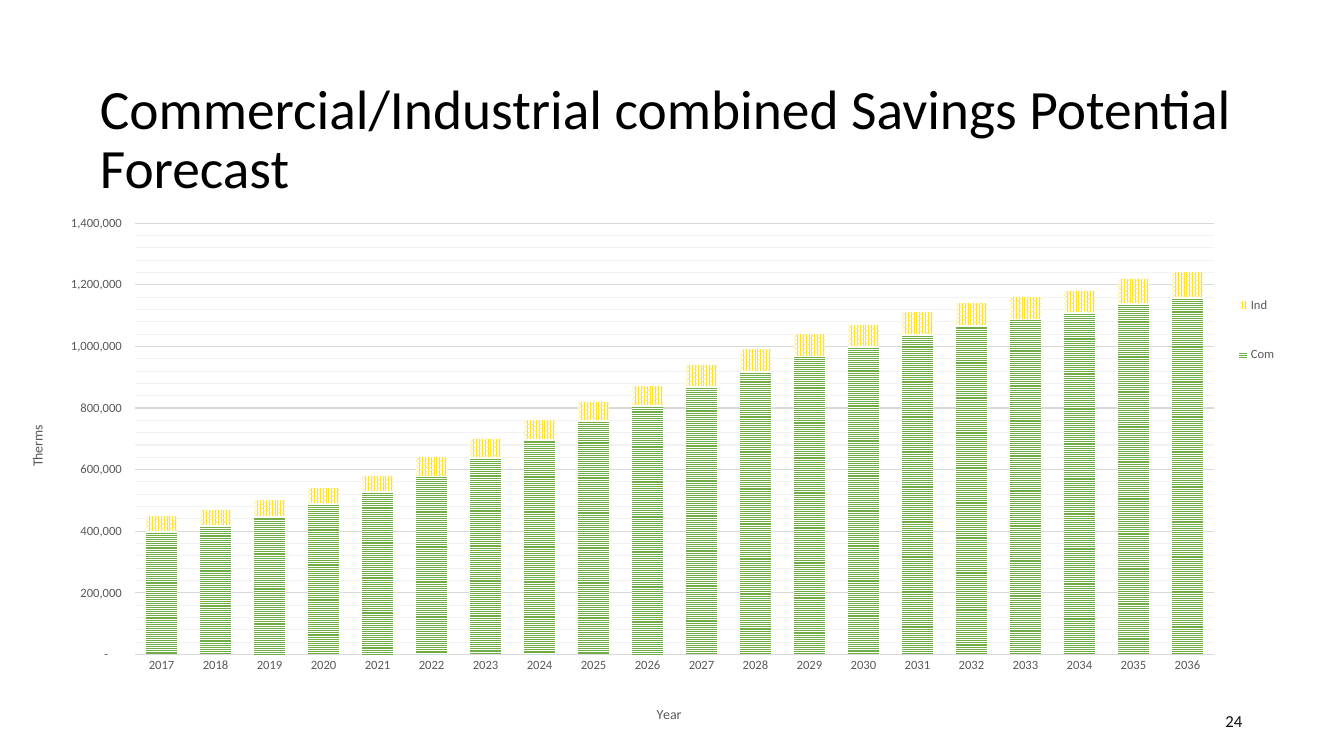
from pptx import Presentation
from pptx.chart.data import CategoryChartData
from pptx.dml.color import RGBColor
from pptx.enum.chart import XL_CHART_TYPE as ChartType, XL_LEGEND_POSITION as LegendPosition
from pptx.enum.chart import XL_TICK_MARK as TickMark
from pptx.enum.dml import MSO_PATTERN as Pattern
from pptx.enum.text import MSO_ANCHOR as Anchor, MSO_AUTO_SIZE as AutoSize, PP_ALIGN as Align
from pptx.oxml import parse_xml
from pptx.oxml.ns import nsdecls, qn
from pptx.util import Inches, Pt

FONT = "Calibri"
COLORS = {
    "title": "000000",
    "page": "0D0D0D",
    "label": "595959",
    "grid": "D9D9D9",
    "minor_grid": "F2F2F2",
    "commercial": "70AD47",
    "industrial": "FFE12F",
    "white": "FFFFFF",
}
YEARS = [str(year) for year in range(2017, 2037)]
COMMERCIAL = [1000 * therms for therms in (
    400, 420, 450, 490, 530, 580, 640, 700, 760, 810,
    870, 920, 970, 1000, 1040, 1070, 1090, 1110, 1140, 1160)]
INDUSTRIAL = [50000] * 5 + [60000] * 5 + [70000] * 8 + [80000] * 2
THERMS_FORMAT = '_(* #,##0_);_(* \\(#,##0\\);_(* "-"??_);_('


def rgb(name):
    return RGBColor.from_string(COLORS[name])


def style_font(font, size, color):
    font.name = FONT
    font.size = Pt(size)
    font.bold = False
    font.color.rgb = rgb(color)


def write(frame, text, size, color, align=Align.LEFT, spacing=None):
    frame.word_wrap = True
    frame.auto_size = AutoSize.NONE
    frame.vertical_anchor = Anchor.MIDDLE
    paragraph = frame.paragraphs[0]
    paragraph.alignment = align
    paragraph.line_spacing = spacing
    run = paragraph.add_run()
    run.text = text
    style_font(run.font, size, color)


def add_title(slide, text):
    title = slide.shapes.title
    title.left, title.top = Inches(0.89), Inches(0.76)
    title.width, title.height = Inches(11.56), Inches(1.28)
    write(title.text_frame, text, 39.6, "title", spacing=0.9)


def add_page_number(slide, number):
    box = slide.shapes.add_textbox(Inches(9.42), Inches(6.95), Inches(3), Inches(0.4))
    write(box.text_frame, number, 12, "page", Align.RIGHT)


def place(element, index, target=None, **fractions):
    """Give a chart part a manual layout, in fractions of the chart's size."""
    for old in element.findall(qn("c:layout")):
        element.remove(old)
    inner = f'<c:layoutTarget val="{target}"/>' if target else ""
    inner += "".join(f'<c:{key}Mode val="edge"/>' for key in "xy")
    inner += "".join(f'<c:{key} val="{value}"/>' for key, value in fractions.items())
    element.insert(index, parse_xml(
        f'<c:layout {nsdecls("c")}><c:manualLayout>{inner}</c:manualLayout></c:layout>'))


def style_line(line, color):
    line.color.rgb = rgb(color)
    line.width = Pt(0.75)


def add_minor_gridlines(axis, color):
    axis.has_minor_gridlines = True
    gridlines = axis._element.find(qn("c:minorGridlines"))
    gridlines.append(parse_xml(
        f'<c:spPr {nsdecls("c", "a")}><a:ln w="{Pt(0.75)}"><a:solidFill>'
        f'<a:srgbClr val="{COLORS[color]}"/></a:solidFill></a:ln></c:spPr>'))


def title_axis(axis, text, x, y):
    run = axis.axis_title.text_frame.paragraphs[0].add_run()
    run.text = text
    style_font(run.font, 10, "label")
    place(axis.axis_title._element, 1, x=x, y=y)


def style_axes(chart):
    years, therms = chart.category_axis, chart.value_axis
    for axis in (years, therms):
        style_font(axis.tick_labels.font, 9, "label")
    years.major_tick_mark = TickMark.NONE
    style_line(years.format.line, "grid")
    title_axis(years, "Year", 0.51, 0.96)

    therms.minimum_scale, therms.maximum_scale = 0, 1400000
    therms.major_unit, therms.minor_unit = 200000, 40000
    style_line(therms.major_gridlines.format.line, "grid")
    add_minor_gridlines(therms, "minor_grid")
    therms.major_tick_mark = TickMark.OUTSIDE
    therms.format.line.fill.background()
    therms.tick_labels.number_format = THERMS_FORMAT
    therms.tick_labels.number_format_is_linked = False
    title_axis(therms, "Therms", 0.02, 0.42)


def style_series(series, pattern, color):
    fill = series.format.fill
    fill.patterned()
    fill.pattern = pattern
    fill.fore_color.rgb = rgb(color)
    fill.back_color.rgb = rgb("white")
    series.invert_if_negative = False


def add_legend(chart):
    chart.has_legend = True
    legend = chart.legend
    legend.position = LegendPosition.RIGHT
    legend.include_in_layout = False
    style_font(legend.font, 9, "label")
    place(legend._element, 1, x=0.96, y=0.11, w=0.04, h=0.26)


def add_savings_chart(slide):
    savings = CategoryChartData(number_format="#,##0")
    savings.categories = YEARS
    savings.add_series("Com", COMMERCIAL)
    savings.add_series("Ind", INDUSTRIAL)
    chart = slide.shapes.add_chart(
        ChartType.COLUMN_STACKED, Inches(0), Inches(2.04),
        Inches(12.72), Inches(5.17), savings).chart
    chart.has_title = False
    style_font(chart.font, 10, "title")

    plot = chart.plots[0]
    plot.gap_width, plot.overlap = 75, 100
    plot.vary_by_categories = False
    commercial, industrial = plot.series
    style_series(commercial, Pattern.NARROW_HORIZONTAL, "commercial")
    style_series(industrial, Pattern.PERCENT_80, "industrial")

    style_axes(chart)
    add_legend(chart)
    plot_area = chart._chartSpace.find(".//" + qn("c:plotArea"))
    place(plot_area, 0, "inner", x=0.105, y=0.034, w=0.842, h=0.833)


def main():
    deck = Presentation()
    deck.slide_width, deck.slide_height = Inches(13.33), Inches(7.5)
    slide = deck.slides.add_slide(deck.slide_layouts[5])
    add_title(slide, "Commercial/Industrial combined Savings Potential Forecast")
    add_page_number(slide, "24")
    add_savings_chart(slide)
    deck.save("out.pptx")


if __name__ == "__main__":
    main()
